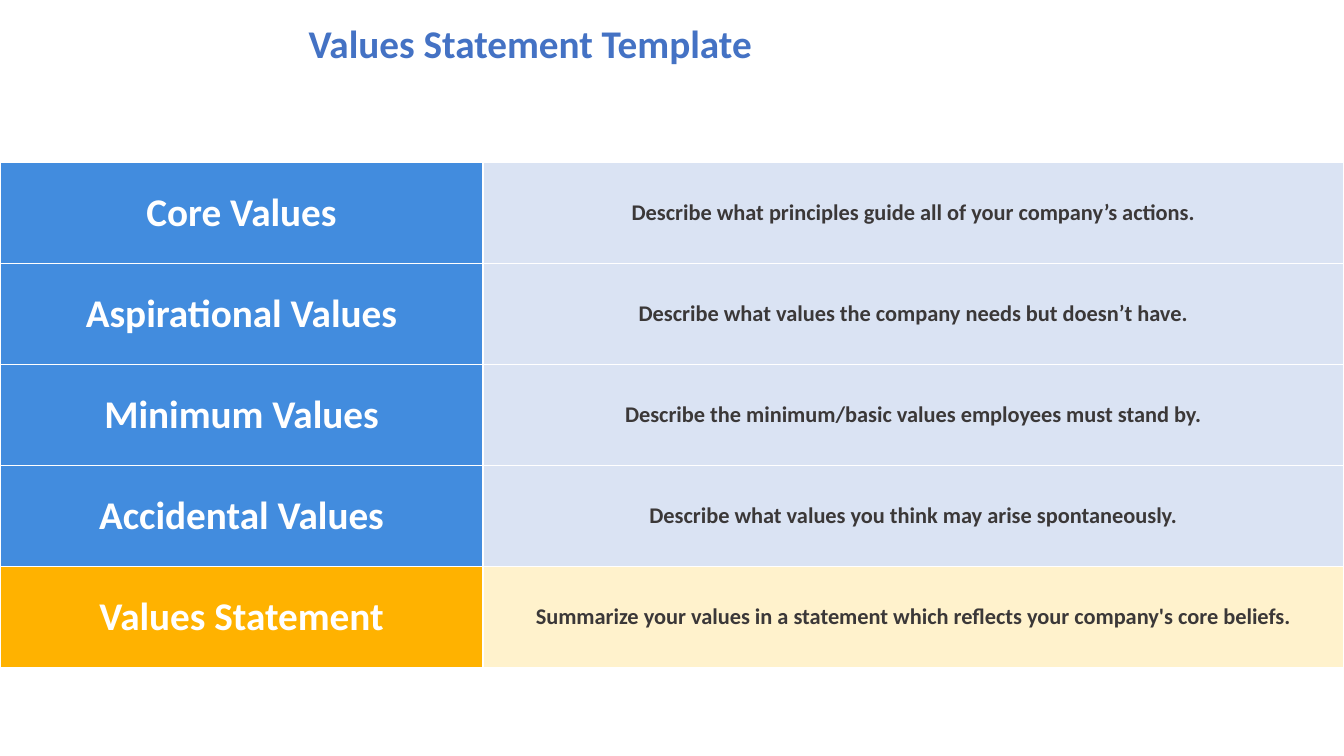
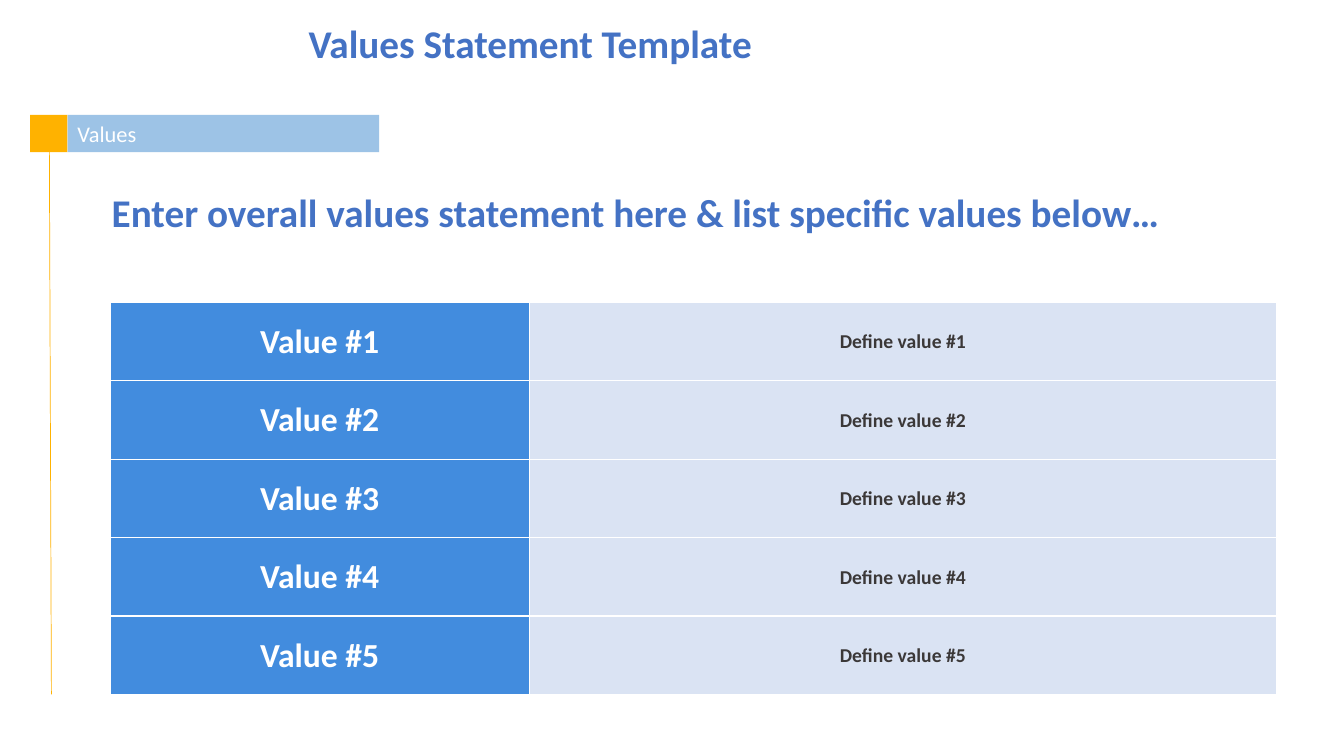
from dataclasses import dataclass

from lxml import etree
from pptx import Presentation
from pptx.dml.color import RGBColor
from pptx.enum.shapes import MSO_CONNECTOR, MSO_SHAPE
from pptx.enum.text import MSO_ANCHOR, MSO_AUTO_SIZE, PP_ALIGN
from pptx.oxml.ns import qn
from pptx.util import Emu, Pt

LEFT, CENTER = PP_ALIGN.LEFT, PP_ALIGN.CENTER
MIDDLE = MSO_ANCHOR.MIDDLE
NO_FIT, GROW = MSO_AUTO_SIZE.NONE, MSO_AUTO_SIZE.SHAPE_TO_FIT_TEXT
RECT, STRAIGHT = MSO_SHAPE.RECTANGLE, MSO_CONNECTOR.STRAIGHT

PX = 9144  # 100 px to the inch
TITLE_ONLY = 5


@dataclass(frozen=True)
class Theme:
    font: str = "Calibri"
    heading: str = "4472C4"
    blue: str = "428CDE"
    pale_blue: str = "DAE3F3"
    tab_blue: str = "9DC3E6"
    amber: str = "FFB200"
    pale_amber: str = "FFF2CC"
    white: str = "FFFFFF"
    dark: str = "3B3838"
    large: int = 28
    medium: int = 24
    body: int = 16
    small: int = 14


T = Theme()


def write(tf, text, size, color, bold=True, align=LEFT):
    p = tf.paragraphs[0]
    p.alignment = align
    r = p.add_run()
    r.text = text
    r.font.name = T.font
    r.font.size = Pt(size)
    r.font.bold = bold
    r.font.color.rgb = RGBColor.from_string(color)


def add_values_table(slide, box, label_width, rows, sizes):
    """Rows hold label, description, label fill and description fill."""
    x, y, w, h = (Emu(n * PX) for n in box)
    table = slide.shapes.add_table(len(rows), 2, x, y, w, h).table
    table.first_row = table.horz_banding = False
    table.columns[0].width = Emu(label_width * PX)
    table.columns[1].width = Emu((box[2] - label_width) * PX)
    for i, (label, description, *fills) in enumerate(rows):
        texts = zip((label, description), fills, sizes, (T.white, T.dark))
        for j, (text, fill, size, color) in enumerate(texts):
            cell = table.cell(i, j)
            cell.margin_left = cell.margin_right = cell.margin_top = Emu(PX)
            cell.margin_bottom = 0
            cell.vertical_anchor = MIDDLE
            tc_pr = cell._tc.get_or_add_tcPr()
            for side in ("lnL", "lnR", "lnT", "lnB"):
                ln = etree.SubElement(tc_pr, qn(f"a:{side}"), w=str(Pt(1)))
                solid = etree.SubElement(ln, qn("a:solidFill"))
                etree.SubElement(solid, qn("a:srgbClr"), val=T.white)
            cell.fill.solid()
            cell.fill.fore_color.rgb = RGBColor.from_string(fill)
            write(cell.text_frame, text, size, color, align=CENTER)


prs = Presentation()
prs.slide_width, prs.slide_height = Emu(1333 * PX), Emu(750 * PX)

slides = []
for _ in range(2):
    slide = prs.slides.add_slide(prs.slide_layouts[TITLE_ONLY])
    title = slide.shapes.title
    title.left, title.top = Emu(296 * PX), Emu(15 * PX)
    title.width, title.height = Emu(1027 * PX), Emu(60 * PX)
    tf = title.text_frame
    tf.auto_size = NO_FIT
    tf.vertical_anchor = MIDDLE
    write(tf, "Values Statement Template", T.large, T.heading)
    tf.paragraphs[0].line_spacing = 0.9
    slides.append(slide)
overview, detail = slides

# Slide 1: kinds of values
kinds = [
    ("Core Values", "Describe what principles guide all of your company’s actions."),
    ("Aspirational Values", "Describe what values the company needs but doesn’t have."),
    ("Minimum Values", "Describe the minimum/basic values employees must stand by."),
    ("Accidental Values", "Describe what values you think may arise spontaneously."),
]
rows = [(*kind, T.blue, T.pale_blue) for kind in kinds]
rows.append((
    "Values Statement",
    "Summarize your values in a statement which reflects your company's core beliefs.",
    T.amber, T.pale_amber,
))
add_values_table(overview, (0, 161, 1333, 501), 479, rows, (T.large, T.body))

# Slide 2: section tab, statement and list of values
for x, w, fill, text in ((30, 37, T.amber, ""), (67, 309, T.tab_blue, "Values")):
    sp = detail.shapes.add_shape(RECT, Emu(x * PX), Emu(114 * PX), Emu(w * PX), Emu(37 * PX))
    sp.shadow.inherit = False
    sp.fill.solid()
    sp.fill.fore_color.rgb = RGBColor.from_string(fill)
    sp.line.fill.background()
    if text:
        sp.text_frame.vertical_anchor = MIDDLE
        write(sp.text_frame, text, T.body, T.white, bold=False)

rule = detail.shapes.add_connector(
    STRAIGHT, Emu(49 * PX), Emu(151 * PX), Emu(51 * PX), Emu(689 * PX))
rule.line.color.rgb = RGBColor.from_string(T.amber)
rule.line.width = Pt(0.5)
etree.SubElement(rule._element.spPr, qn("a:effectLst"))

rows = [(f"Value #{n}", f"Define value #{n}", T.blue, T.pale_blue) for n in range(1, 6)]
add_values_table(detail, (109, 300, 1157, 389), 416, rows, (T.medium, T.small))

statement = detail.shapes.add_textbox(
    Emu(101 * PX), Emu(182 * PX), Emu(1169 * PX), Emu(57 * PX))
tf = statement.text_frame
tf.word_wrap = True
tf.auto_size = GROW
write(tf, "Enter overall values statement here & list specific values below…", T.large, T.heading)

prs.save("out.pptx")
